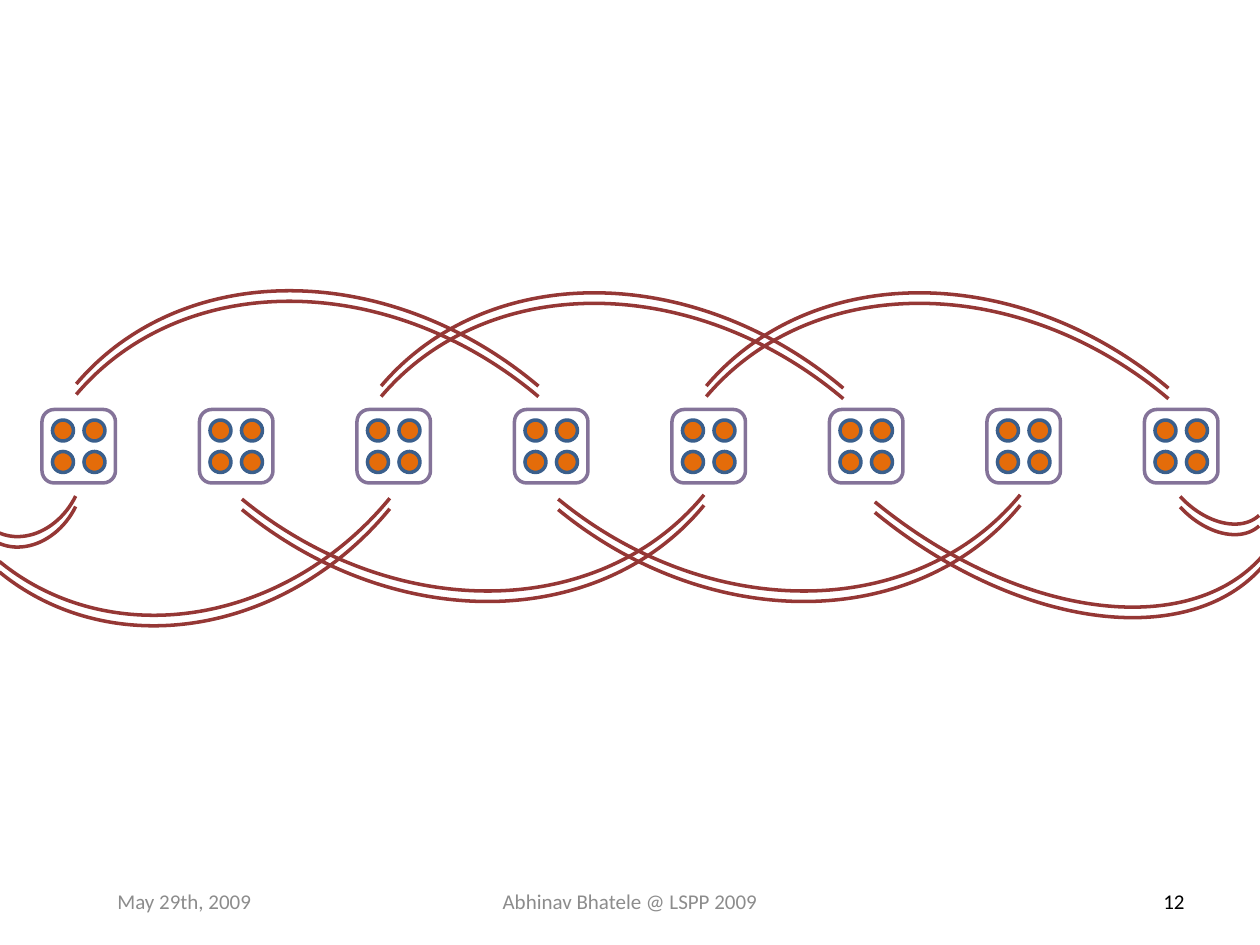
from dataclasses import dataclass, field

from lxml import etree
from pptx import Presentation
from pptx.dml.color import RGBColor
from pptx.enum import shapes, text
from pptx.oxml import ns
from pptx.util import Pt

COLORS = {"core": "E46C0A", "core_edge": "3A5F8C", "node": "604A7B",
          "link": "953735", "muted": "8C8C8C", "number": "000000"}


@dataclass
class SlideBuilder:
    """Draw styled elements on the current slide, with lengths in points."""
    slide: object
    font: str = "Calibri"
    font_size: float = 12
    line_width: float = 2
    colors: dict = field(default_factory=lambda: COLORS)

    def color(self, name):
        return RGBColor.from_string(self.colors[name])

    def outline(self, kind, box, line, fill=None):
        shape = self.slide.shapes.add_shape(kind, *map(Pt, box))
        shape.shadow.inherit = False
        if fill:
            shape.fill.solid()
            shape.fill.fore_color.rgb = self.color(fill)
        else:
            shape.fill.background()
        shape.line.color.rgb = self.color(line)
        shape.line.width = Pt(self.line_width)
        return shape

    def node(self, left, top, size=42, core=12, inset=6, pitch=18):
        frame = self.outline(shapes.MSO_SHAPE.ROUNDED_RECTANGLE,
                             (left, top, size, size), "node")
        line_color = frame.line._ln.find(".//" + ns.qn("a:srgbClr"))
        etree.SubElement(line_color, ns.qn("a:alpha"), val="77000")
        for row in range(2):
            for column in range(2):
                box = (left + inset + column * pitch,
                       top + inset + row * pitch, core, core)
                self.outline(shapes.MSO_SHAPE.OVAL, box, "core_edge", "core")

    def double_arc(self, left, top, width, height, rotation, gap=6):
        for offset in (gap, 0):
            box = (left, top + offset, width, height)
            arc = self.outline(shapes.MSO_SHAPE.ARC, box, "link")
            arc.rotation = rotation

    def label(self, content, left, width, align, color, top=500.5, height=28.8):
        shape = self.slide.shapes.add_textbox(*map(Pt, (left, top, width, height)))
        frame = shape.text_frame
        frame.word_wrap = True
        frame.vertical_anchor = text.MSO_ANCHOR.MIDDLE
        paragraph = frame.paragraphs[0]
        paragraph.alignment = align
        run = paragraph.add_run()
        run.text = content
        run.font.name = self.font
        run.font.size = Pt(self.font_size)
        run.font.color.rgb = self.color(color)


def main():
    presentation = Presentation()
    presentation.slide_width, presentation.slide_height = Pt(720), Pt(540)
    builder = SlideBuilder(presentation.slides.add_slide(presentation.slide_layouts[6]))

    for index in range(8):
        builder.node(24 + index * 90, 234)

    for left, top in ((28.8, 147.6), (203, 148.8), (388.8, 148.8)):
        builder.double_arc(left, top, 339, 405, 310.2)
    for left in (257, 76.3):
        builder.double_arc(left, -48.3, 339, 405, 129.4)
    builder.double_arc(-23, 238.5, 76.3, 62.5, 116.1)
    builder.double_arc(667.5, 227.7, 51.8, 77, 137.4)
    builder.double_arc(-62.2, 40.5, 339, 298.8, 129.4)
    builder.double_arc(456.5, 4.2, 237.6, 381.6, 129.4)

    builder.label("May 29th, 2009", 60, 144, text.PP_ALIGN.LEFT, "muted")
    builder.label("Abhinav Bhatele @ LSPP 2009", 246, 228, text.PP_ALIGN.CENTER, "muted")
    builder.label("12", 516, 168, text.PP_ALIGN.RIGHT, "number")
    presentation.save("out.pptx")


if __name__ == "__main__":
    main()
